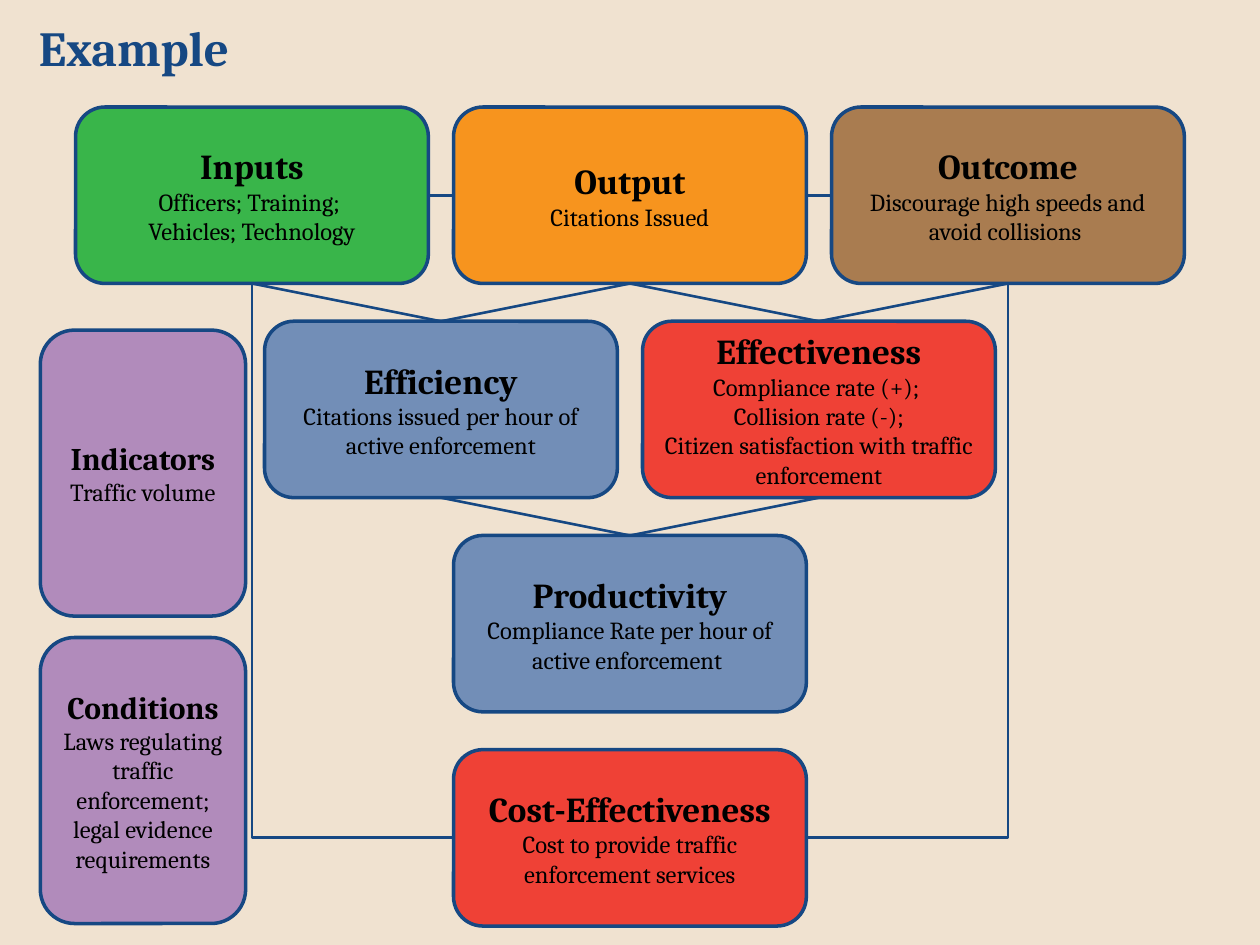
"""Build a slide relating inputs, output and outcome to performance measures."""
from dataclasses import dataclass

from pptx import Presentation
from pptx.dml.color import RGBColor
from pptx.enum.shapes import MSO_CONNECTOR as CONN, MSO_SHAPE as SHAPE
from pptx.enum.text import MSO_ANCHOR as ANCHOR, PP_ALIGN as ALIGN
from pptx.oxml.ns import qn
from pptx.util import Pt

EMU_PER_PX = 9144
TOP, LEFT, BOTTOM, RIGHT = range(4)


@dataclass(frozen=True)
class Theme:
    font: str = "Cambria"
    background: str = "F0E2D0"
    navy: str = "164883"
    ink: str = "000000"
    green: str = "39B54A"
    orange: str = "F7941E"
    brown: str = "A97C50"
    blue: str = "728EB7"
    red: str = "EF4136"
    purple: str = "B18BBB"
    title: int = 28
    heading: int = 20
    side_heading: int = 18
    body: int = 14
    border: float = 2
    link: float = 1.5


def px(n):
    return n * EMU_PER_PX


def rgb(value):
    return RGBColor.from_string(value)


class Diagram:
    def __init__(self, prs, theme):
        self.t = theme
        self.s = prs.slides.add_slide(prs.slide_layouts[6])
        self.s.background.fill.solid()
        self.s.background.fill.fore_color.rgb = rgb(theme.background)

    def run(self, p, text, size, color, bold=False):
        r = p.add_run()
        r.text = text
        r.font.name = self.t.font
        r.font.size = Pt(size)
        r.font.bold = bold
        r.font.color.rgb = rgb(color)

    def title(self, text, x, y, w, h):
        tf = self.s.shapes.add_textbox(px(x), px(y), px(w), px(h)).text_frame
        tf.word_wrap = True
        tf.vertical_anchor = ANCHOR.MIDDLE
        tf.margin_left = px(11)
        self.run(tf.paragraphs[0], text, self.t.title, self.t.navy, True)

    def box(self, x, y, w, h, fill, heading, lines, size):
        sp = self.s.shapes.add_shape(SHAPE.ROUNDED_RECTANGLE, px(x), px(y), px(w), px(h))
        sp.shadow.inherit = False
        sp.fill.solid()
        sp.fill.fore_color.rgb = rgb(fill)
        sp.line.color.rgb = rgb(self.t.navy)
        sp.line.width = Pt(self.t.border)
        tf = sp.text_frame
        tf.word_wrap = True
        tf.vertical_anchor = ANCHOR.MIDDLE
        for i, text in enumerate([heading, *lines]):
            p = tf.add_paragraph() if i else tf.paragraphs[0]
            p.alignment = ALIGN.CENTER
            self.run(p, text, self.t.body if i else size, self.t.ink, not i)
        return sp

    def connector(self, kind, x1=0, y1=0, x2=0, y2=0):
        c = self.s.shapes.add_connector(kind, px(x1), px(y1), px(x2), px(y2))
        c.line.color.rgb = rgb(self.t.navy)
        c.line.width = Pt(self.t.link)
        sp_pr = c.element.spPr
        sp_pr.append(sp_pr.makeelement(qn("a:effectLst"), {}))
        return c

    def link(self, start, start_site, end, end_site):
        c = self.connector(CONN.STRAIGHT)
        c.begin_connect(start, start_site)
        c.end_connect(end, end_site)

    def elbow(self, x1, y1, x2, y2):
        c = self.connector(CONN.ELBOW, x1, y1, x2, y2)
        c.element.spPr.find(qn("a:prstGeom")).set("prst", "bentConnector2")


def main():
    prs = Presentation()
    prs.slide_width, prs.slide_height = px(1000), px(750)
    t = Theme()
    d = Diagram(prs, t)

    steps = [
        (0, 0, t.green, "Inputs", ["Officers; Training; ", "Vehicles; Technology"]),
        (2, 0, t.orange, "Output", ["Citations Issued"]),
        (4, 0, t.brown, "Outcome", ["Discourage high speeds and avoid collisions "]),
        (1, 1, t.blue, "Efficiency", ["Citations issued per hour of active enforcement"]),
        (2, 2, t.blue, "Productivity", ["Compliance Rate per hour of active enforcement "]),
        (3, 1, t.red, "Effectiveness", ["Compliance rate (+); ", "Collision rate (-);",
                                        "Citizen satisfaction with traffic enforcement"]),
        (2, 3, t.red, "Cost-Effectiveness", ["Cost to provide traffic enforcement services"]),
    ]
    boxes = {
        name: d.box(60 + 150 * col, 85 + 170 * row, 280, 140, fill, name, lines, t.heading)
        for col, row, fill, name, lines in steps
    }
    d.title("Example", 20, 0, 900, 75)

    for upper, lower in [
        ("Inputs", "Efficiency"), ("Output", "Efficiency"),
        ("Output", "Effectiveness"), ("Outcome", "Effectiveness"),
        ("Efficiency", "Productivity"), ("Effectiveness", "Productivity"),
    ]:
        d.link(boxes[upper], BOTTOM, boxes[lower], TOP)
    for x1, x2 in [(640, 800), (360, 200)]:
        d.elbow(x1, 665, x2, 225)
    for left, right in [("Inputs", "Output"), ("Output", "Outcome")]:
        d.link(boxes[left], RIGHT, boxes[right], LEFT)

    for i, (name, text) in enumerate([
        ("Indicators", "Traffic volume"),
        ("Conditions", "Laws regulating traffic enforcement; legal evidence requirements"),
    ]):
        d.box(32, 262 + 244 * i, 163, 227, t.purple, name, [text], t.side_heading)

    prs.save("out.pptx")


if __name__ == "__main__":
    main()
